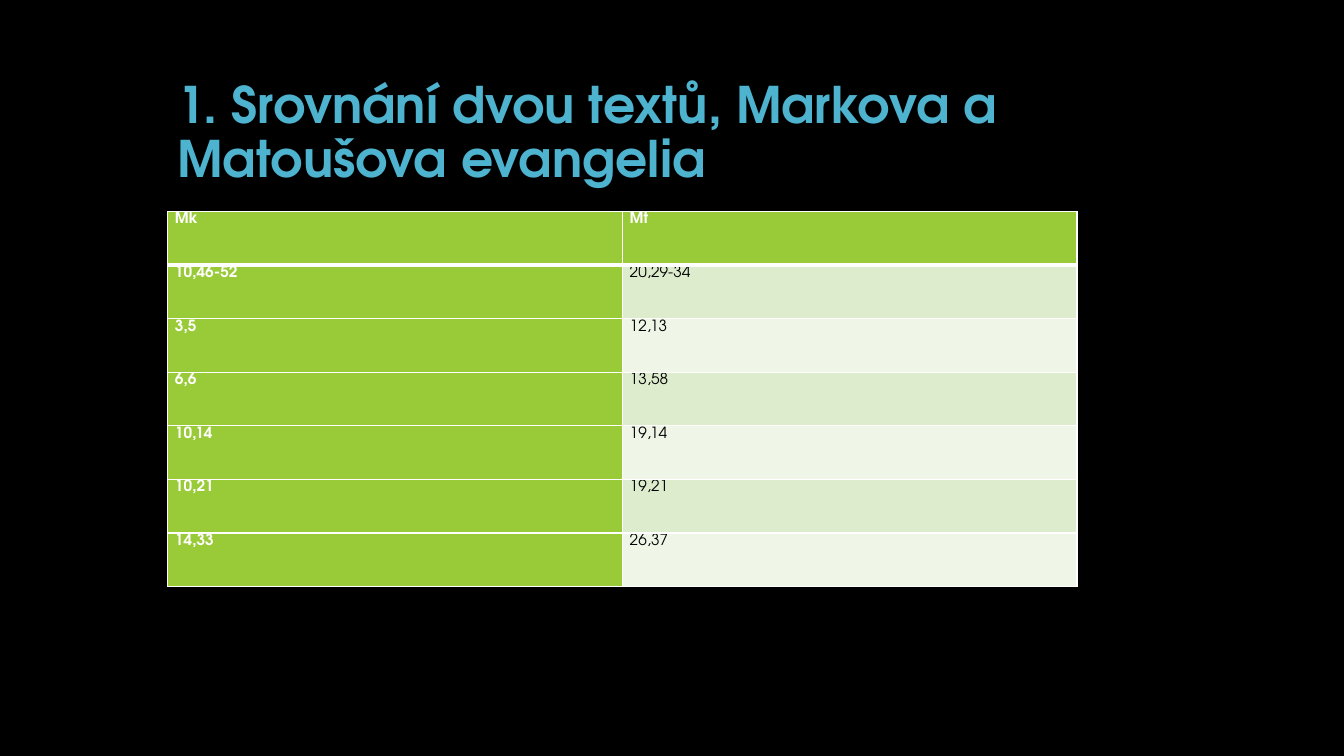
from dataclasses import dataclass

import lxml.etree
import pptx
import pptx.dml.color
import pptx.enum.text
import pptx.oxml.ns
import pptx.table
import pptx.text.text
import pptx.util

FONT = "TeX Gyre Adventor"
COLORS = {
    "background": "000000",
    "title": "4EB3CF",
    "green": "99CB38",
    "dark band": "DEECCE",
    "light band": "EFF6E8",
    "white": "FFFFFF",
    "black": "000000",
}
LEFT = pptx.util.Cm(4.22)
COLUMN_WIDTH = pptx.util.Cm(11.46)
ROW_HEIGHT = pptx.util.Cm(1.35)


@dataclass
class Parallel:
    mark: str
    matthew: str


PARALLELS = [
    Parallel("Mk", "Mt"),
    Parallel("10,46-52", "20,29-34"),
    Parallel("3,5", "12,13"),
    Parallel("6,6", "13,58"),
    Parallel("10,14", "19,14"),
    Parallel("10,21", "19,21"),
    Parallel("14,33", "26,37"),
]


def rgb(name: str) -> pptx.dml.color.RGBColor:
    return pptx.dml.color.RGBColor.from_string(COLORS[name])


def format_paragraph(paragraph: pptx.text.text._Paragraph, size: int, color: str,
                     bold: bool, spacing: float) -> None:
    paragraph.line_spacing = spacing
    paragraph.font.name = FONT
    paragraph.font.size = pptx.util.Pt(size)
    paragraph.font.bold = bold
    paragraph.font.color.rgb = rgb(color)


def add_border(cell: pptx.table._Cell, side: str, width: float) -> None:
    properties = cell._tc.get_or_add_tcPr()
    qn = pptx.oxml.ns.qn
    line = lxml.etree.SubElement(properties, qn(f"a:ln{side}"), w=str(pptx.util.Pt(width)))
    fill = lxml.etree.SubElement(line, qn("a:solidFill"))
    lxml.etree.SubElement(fill, qn("a:srgbClr"), val=COLORS["white"])


def fill_cell(cell: pptx.table._Cell, text: str, row: int, column: int) -> None:
    is_header = row == 0 or column == 0
    cell.text = text
    cell.margin_left = cell.margin_right = pptx.util.Cm(0.19)
    cell.margin_top = cell.margin_bottom = 0
    format_paragraph(cell.text_frame.paragraphs[0], 11,
                     "white" if is_header else "black", is_header, 1.07)
    # Borders come before the fill; a thick rule closes the header row
    thick_side = {0: "B", 1: "T"}.get(row)
    for side in "LRTB":
        add_border(cell, side, 3 if side == thick_side else 1)
    band = "dark band" if row % 2 else "light band"
    cell.fill.solid()
    cell.fill.fore_color.rgb = rgb("green" if is_header else band)


def main() -> None:
    presentation = pptx.Presentation()
    presentation.slide_width = pptx.util.Cm(33.87)
    presentation.slide_height = pptx.util.Cm(19.05)
    slide = presentation.slides.add_slide(presentation.slide_layouts[5])
    slide.background.fill.solid()
    slide.background.fill.fore_color.rgb = rgb("background")

    # Title
    title = slide.shapes.title
    title.left, title.top = LEFT, pptx.util.Cm(1.07)
    title.width, title.height = pptx.util.Cm(25.4), pptx.util.Cm(3.81)
    title.text_frame.text = "1. Srovnání dvou textů, Markova a Matoušova evangelia"
    title.text_frame.word_wrap = True
    title.text_frame.auto_size = pptx.enum.text.MSO_AUTO_SIZE.NONE
    title.text_frame.vertical_anchor = pptx.enum.text.MSO_ANCHOR.BOTTOM
    heading = title.text_frame.paragraphs[0]
    heading.alignment = pptx.enum.text.PP_ALIGN.LEFT
    format_paragraph(heading, 36, "title", True, 0.9)

    # Table of parallel passages
    table = slide.shapes.add_table(
        len(PARALLELS), 2, LEFT, pptx.util.Cm(5.33),
        COLUMN_WIDTH * 2, ROW_HEIGHT * len(PARALLELS)).table
    table.first_col = True
    for column in table.columns:
        column.width = COLUMN_WIDTH
    for row, parallel in enumerate(PARALLELS):
        table.rows[row].height = ROW_HEIGHT
        for column, text in enumerate((parallel.mark, parallel.matthew)):
            fill_cell(table.cell(row, column), text, row, column)

    presentation.save("out.pptx")


if __name__ == "__main__":
    main()
